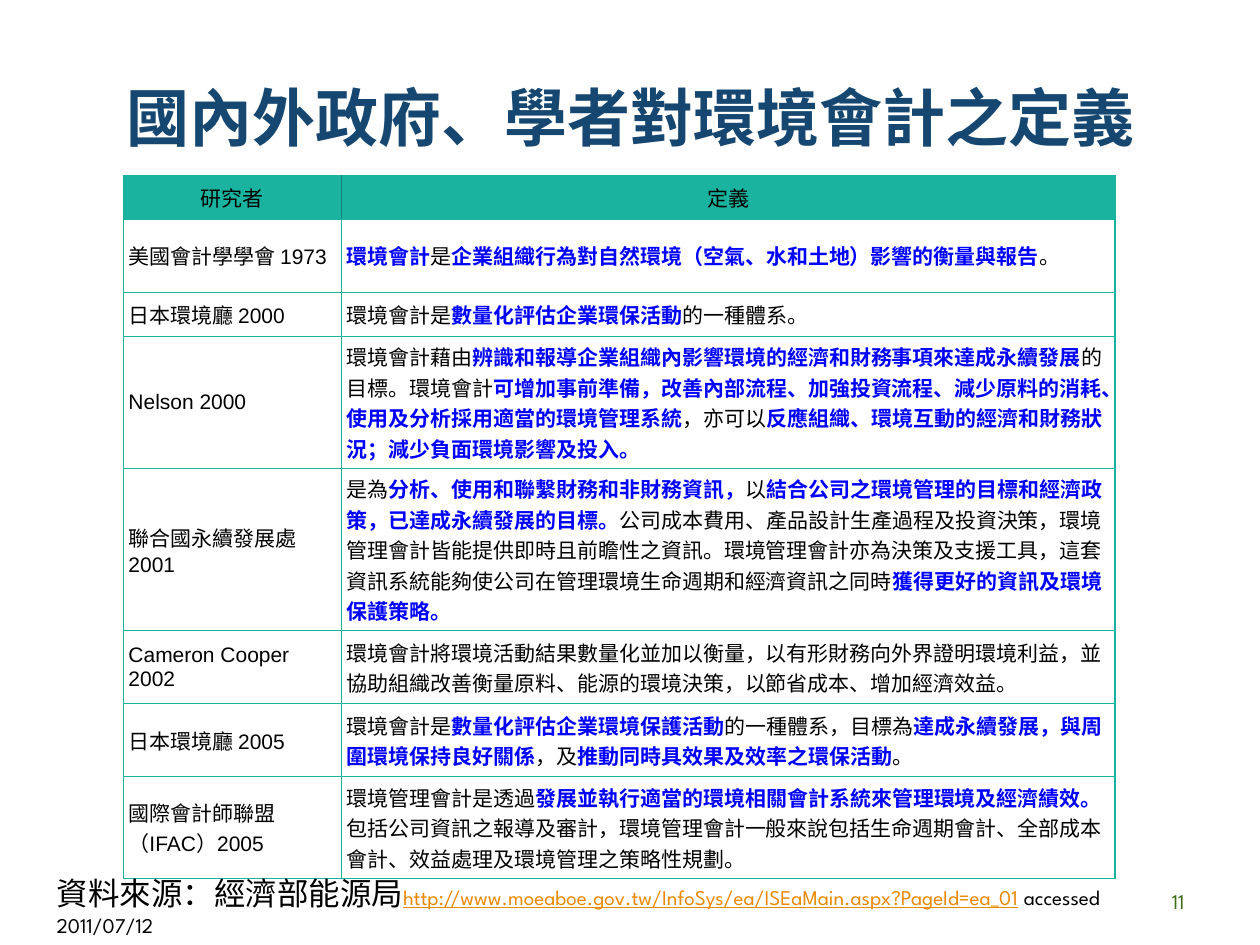
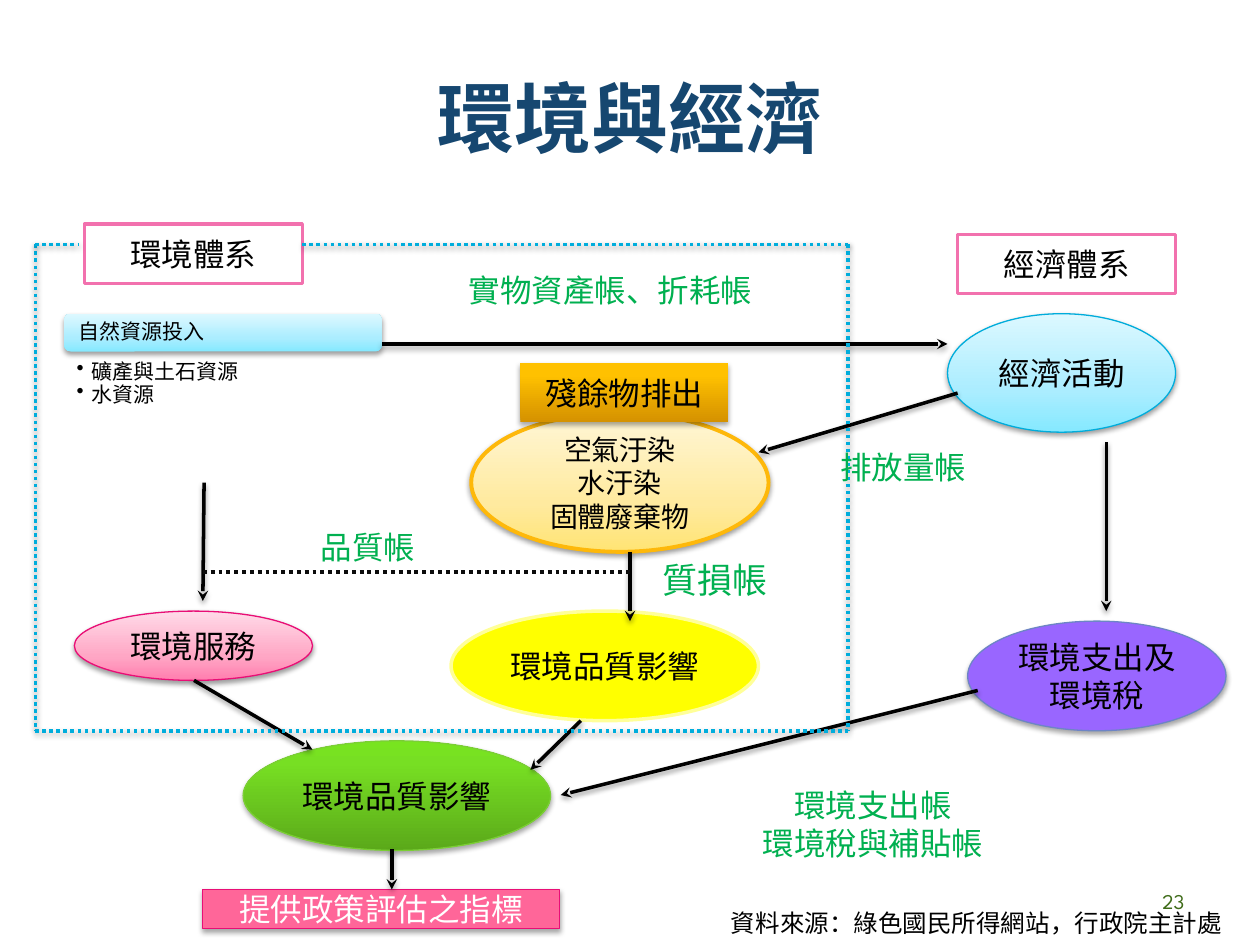
"""Build two slides on environmental accounting: a table and a flow diagram."""
from lxml import etree
from pptx import Presentation
from pptx import util as u
from pptx.dml.color import RGBColor
from pptx.enum import dml, shapes, text
from pptx.oxml.ns import qn

FACE, PLAIN = "League Spartan", "Arial"
BLACK, WHITE, NAVY, GREEN = "000000", "FFFFFF", "164770", "00B050"
BLUE, TEAL, DEEP, PINK, CYAN = "0000FF", "1AB39F", "138677", "F271AE", "00ADDC"
ICE = [(0, "85E9FF"), (35, "ABEDFF"), (100, "DCF8FF")]
SAND = [(0, "FFE474"), (35, "FFEA9F"), (100, "FFF6D6")]
GOLD = [(0, "D59200"), (80, "FFC100"), (100, "FFC300")]
ROSE = [(0, "FF7EAF"), (35, "FFA7C5"), (100, "FFDAE8")]
LEAF = [(0, "5BA91A"), (80, "77DF23"), (100, "78E41F")]
SOFT, HARD = (38, 1.6), (35, 1.8)
LEFT, MID, RIGHT = text.PP_ALIGN.LEFT, text.PP_ALIGN.CENTER, text.PP_ALIGN.RIGHT
BOX, OVAL, ROUND = (shapes.MSO_SHAPE.RECTANGLE, shapes.MSO_SHAPE.OVAL,
                    shapes.MSO_SHAPE.ROUNDED_RECTANGLE)


def rgb(hue):
    return RGBColor.from_string(hue)


def add(node, tag, **attrs):
    kid = etree.SubElement(node, qn(tag))
    for key, val in attrs.items():
        kid.set(key, str(val))
    return kid


def inch(nums):
    return [u.Inches(n) for n in nums]


class Deck:
    def __init__(self):
        self.prs = Presentation()
        self.prs.slide_width, self.prs.slide_height = inch((10, 7.5))

    def start(self, title, size, page):
        self.slide = self.prs.slides.add_slide(self.prs.slide_layouts[5])
        head = self.slide.shapes.title
        head.left, head.top, head.width, head.height = inch((0.5, 0.3, 9, 1.25))
        self.fill_text(head.text_frame, [title], size, NAVY, MID, True, bold=True)
        self.label((7.17, 6.95, 2.33, 0.4), [page], 12, "3F6C19", RIGHT, True)

    def run(self, para, words, size, hue, bold=False, face=FACE, under=False):
        run = para.add_run()
        run.text = words
        font = run.font
        font.name, font.size, font.bold = face, u.Pt(size), bold
        font.underline = under
        font.color.rgb = rgb(hue)

    def fill_text(self, frame, lines, size, hue, align, mid=False, bold=False):
        frame.word_wrap = True
        frame.auto_size = text.MSO_AUTO_SIZE.NONE
        frame.vertical_anchor = text.MSO_ANCHOR.MIDDLE if mid else text.MSO_ANCHOR.TOP
        for i, words in enumerate(lines):
            para = frame.add_paragraph() if i else frame.paragraphs[0]
            para.alignment = align
            self.run(para, words, size, hue, bold)

    def label(self, at, lines, size=18, hue=GREEN, align=MID, mid=False):
        frame = self.slide.shapes.add_textbox(*inch(at)).text_frame
        self.fill_text(frame, lines, size, hue, align, mid)
        return frame

    def bullets(self, at, lines):
        frame = self.label(at, lines, 12, BLACK, LEFT)
        for i, para in enumerate(frame.paragraphs):
            props = para._p.get_or_add_pPr()
            props.set("marL", str(u.Inches(0.12)))
            props.set("indent", str(u.Inches(-0.12)))
            para.line_spacing = 0.75
            para.space_before = u.Pt(2.4 if i else 0)
            add(props, "a:buChar", char="•")

    def shade(self, node, shadow):
        alpha, dist = shadow
        glow = add(node, "a:outerShdw", blurRad=u.Pt(3.1), dist=u.Pt(dist),
                   dir=90 * 60000, rotWithShape=0)
        add(add(glow, "a:srgbClr", val=BLACK), "a:alpha", val=alpha * 1000)

    def shape(self, kind, at, lines, fill, edge=None, width=0.75, shadow=None,
              size=18, hue=BLACK, align=MID):
        item = self.slide.shapes.add_shape(kind, *inch(at))
        item.shadow.inherit = False
        props = item._element.spPr
        if isinstance(fill, str):
            item.fill.solid()
            item.fill.fore_color.rgb = rgb(fill)
        else:
            item.fill.gradient()
            item.fill.gradient_angle = 90
            stops = next(props.iter(qn("a:gsLst")))
            for old in list(stops):
                stops.remove(old)
            for pos, tint in fill:
                add(add(stops, "a:gs", pos=pos * 1000), "a:srgbClr", val=tint)
        if edge:
            item.line.color.rgb = rgb(edge)
            item.line.width = u.Pt(width)
        else:
            item.line.fill.background()
        if shadow:
            self.shade(props.find(qn("a:effectLst")), shadow)
        self.fill_text(item.text_frame, lines, size, hue, align, True)
        return item

    def line(self, ends, hue=BLACK, width=2, dots=False, shadow=SOFT):
        link = self.slide.shapes.add_connector(shapes.MSO_CONNECTOR.STRAIGHT,
                                               *inch(ends))
        link.line.color.rgb = rgb(hue)
        link.line.width = u.Pt(width)
        if dots:
            link.line.dash_style = dml.MSO_LINE.ROUND_DOT
        else:
            add(link.line._get_or_add_ln(), "a:tailEnd", type="stealth")
        effect = add(link._element.spPr, "a:effectLst")
        if shadow:
            self.shade(effect, shadow)

    def cell(self, cell, words, head, col):
        cell.margin_left = cell.margin_right = u.Inches(0.04)
        cell.margin_top = cell.margin_bottom = u.Inches(0.04)
        cell.vertical_anchor = text.MSO_ANCHOR.MIDDLE
        if head:
            cell.fill.solid()
            cell.fill.fore_color.rgb = rgb(TEAL)
        else:
            cell.fill.background()
        props = cell._tc.get_or_add_tcPr()
        inner = "R" if col == 0 else "L"
        for i, side in enumerate("LRTB"):
            dark = head and side == inner
            edge = add(props, "a:ln" + side, w=u.Pt(1 if dark else 0.75))
            add(add(edge, "a:solidFill"), "a:srgbClr", val=DEEP if dark else TEAL)
            props.insert(i, edge)
        para = cell.text_frame.paragraphs[0]
        para.alignment = MID if head else LEFT
        for i, piece in enumerate(words.split("*")):
            if piece:
                key = i % 2 == 1
                self.run(para, piece, 12, BLUE if key else BLACK, key, PLAIN)

    def table(self, left, top, cols, tall, rows):
        size = inch((left, top, sum(cols), sum(tall)))
        grid = self.slide.shapes.add_table(len(rows), len(cols), *size).table
        grid.first_row = grid.horz_banding = False
        for col, wide in zip(grid.columns, cols):
            col.width = u.Inches(wide)
        for r, (high, row) in enumerate(zip(tall, rows)):
            grid.rows[r].height = u.Inches(high)
            for c, words in enumerate(row):
                self.cell(grid.cell(r, c), words, r == 0, c)


ROWS = [
    ("研究者", "定義"),
    ("美國會計學學會 1973",
     "*環境會計*是*企業組織行為對自然環境（空氣、水和土地）影響的衡量與報告*。"),
    ("日本環境廳 2000", "環境會計是*數量化評估企業環保活動*的一種體系。"),
    ("Nelson 2000",
     "環境會計藉由*辨識和報導企業組織內影響環境的經濟和財務事項來達成永續發展*"
     "的目標。環境會計*可增加事前準備，改善內部流程、加強投資流程、減少原料的消耗、"
     "使用及分析採用適當的環境管理系統*，亦可以*反應組織、環境互動的經濟和財務狀況；"
     "減少負面環境影響及投入。*"),
    ("聯合國永續發展處 2001",
     "是為*分析、使用和聯繫財務和非財務資訊，*以*結合公司之環境管理的目標和經濟政策，"
     "已達成永續發展的目標。*公司成本費用、產品設計生產過程及投資決策，"
     "環境管理會計皆能提供即時且前瞻性之資訊。環境管理會計亦為決策及支援工具，"
     "這套資訊系統能夠使公司在管理環境生命週期和經濟資訊之同時"
     "*獲得更好的資訊及環境保護策略。*"),
    ("Cameron Cooper 2002",
     "環境會計將環境活動結果數量化並加以衡量，以有形財務向外界證明環境利益，"
     "並協助組織改善衡量原料、能源的環境決策，以節省成本、增加經濟效益。"),
    ("日本環境廳 2005",
     "環境會計是*數量化評估企業環境保護活動*的一種體系，目標為*達成永續發展，"
     "與周圍環境保持良好關係*，及*推動同時具效果及效率之環保活動*。"),
    ("國際會計師聯盟（IFAC）2005",
     "環境管理會計是透過*發展並執行適當的環境相關會計系統來管理環境及經濟績效。*"
     "包括公司資訊之報導及審計，環境管理會計一般來說包括生命週期會計、全部成本會計、"
     "效益處理及環境管理之策略性規劃。"),
]


def define(deck):
    deck.start("國內外政府、學者對環境會計之定義", 36, "11")
    deck.table(0.98, 1.39, (1.73, 6.14),
               (0.35, 0.58, 0.35, 1.03, 1.1, 0.58, 0.58, 0.8), ROWS)
    frame = deck.label((0.35, 6.89, 9.21, 0.61), ["資料來源：經濟部能源局"],
                       18, BLACK, LEFT)
    para = frame.paragraphs[0]
    deck.run(para, "http://www.moeaboe.gov.tw/InfoSys/ea/ISEaMain.aspx?PageId=ea_01",
             12, "EB8803", under=True)
    deck.run(para, " accessed 2011/07/12", 12, BLACK)


def flow(deck):
    deck.start("環境與經濟", 44, "23")
    deck.label((1.22, 7.16, 8.58, 0.34), ["資料來源：綠色國民所得網站，行政院主計處"],
               14, BLACK, RIGHT)
    for left, top, name in ((7.6, 1.86, "經濟體系"), (0.67, 1.78, "環境體系")):
        deck.shape(BOX, (left, top, 1.73, 0.47), [name], WHITE, PINK, 2)

    source = deck.shape(ROUND, (0.51, 2.49, 2.52, 0.3), ["自然資源投入"], ICE,
                        shadow=SOFT, size=12, align=LEFT)
    source.text_frame.paragraphs[0].line_spacing = 0.85
    deck.bullets((0.51, 2.84, 2.52, 0.3), ["礦產與土石資源", "水資源"])

    deck.shape(OVAL, (3.74, 3.28, 2.36, 1.1), ["空氣汙染", "水汙染", "固體廢棄物"],
               SAND, "FEB80A", 2.25, SOFT, 16)
    deck.shape(BOX, (4.13, 2.88, 1.65, 0.47), ["殘餘物排出"], GOLD, shadow=HARD)
    for at, name, fill, edge, width, shadow in (
            ((7.52, 2.49, 1.81, 0.94), "經濟活動", ICE, "00ACDB", 0.75, SOFT),
            ((7.68, 4.93, 2.05, 0.87), "環境支出及環境稅", "9966FF", "6D85C5", 0.75, HARD),
            ((0.59, 4.85, 1.89, 0.55), "環境服務", ROSE, "E90E76", 0.75, SOFT),
            ((3.58, 4.85, 2.44, 0.87), "環境品質影響", "FFFF00", "FFFF99", 2, None),
            ((1.93, 5.88, 2.44, 0.87), "環境品質影響", LEAF, "7BCF35", 0.75, HARD)):
        deck.shape(OVAL, at, [name], fill, edge, width, shadow)
    deck.shape(BOX, (1.61, 7.06, 2.83, 0.31), ["提供政策評估之指標"], "FF6699",
               "E90E76", shadow=HARD, hue=WHITE)

    for ends in ((8.78, 3.51, 8.78, 4.85), (7.76, 5.48, 4.45, 6.31),
                 (7.6, 3.12, 6.02, 3.59), (3.03, 2.73, 7.52, 2.73),
                 (1.62, 3.83, 1.61, 4.77), (3.11, 6.74, 3.11, 7.06),
                 (1.54, 5.4, 2.48, 5.95), (4.61, 5.72, 4.21, 6.11),
                 (5, 4.38, 5, 4.93)):
        deck.line(ends)
    deck.line((1.61, 4.54, 5, 4.54), "0C0C0C", 2.25, True, None)
    west, east, north, south = 0.28, 6.73, 1.94, 5.8
    for ends in ((2.4, north, east, north), (east, north, east, south),
                 (west, north, west, south), (west, north, 0.63, north),
                 (west, south, east, south)):
        deck.line(ends, CYAN, dots=True)

    deck.label((6.57, 3.51, 1.42, 0.4), ["排放量帳"], align=LEFT)
    deck.label((5.71, 6.19, 2.44, 0.71), ["環境支出帳", "環境稅與補貼帳"])
    deck.label((3.27, 2.1, 3.15, 0.4), ["實物資產帳、折耗帳"])
    deck.label((2.17, 4.14, 1.5, 0.4), ["品質帳"])
    deck.label((5.16, 4.38, 1.1, 0.44), ["質損帳"], 20, align=LEFT)


def main():
    deck = Deck()
    define(deck)
    flow(deck)
    deck.prs.save("out.pptx")


if __name__ == "__main__":
    main()
